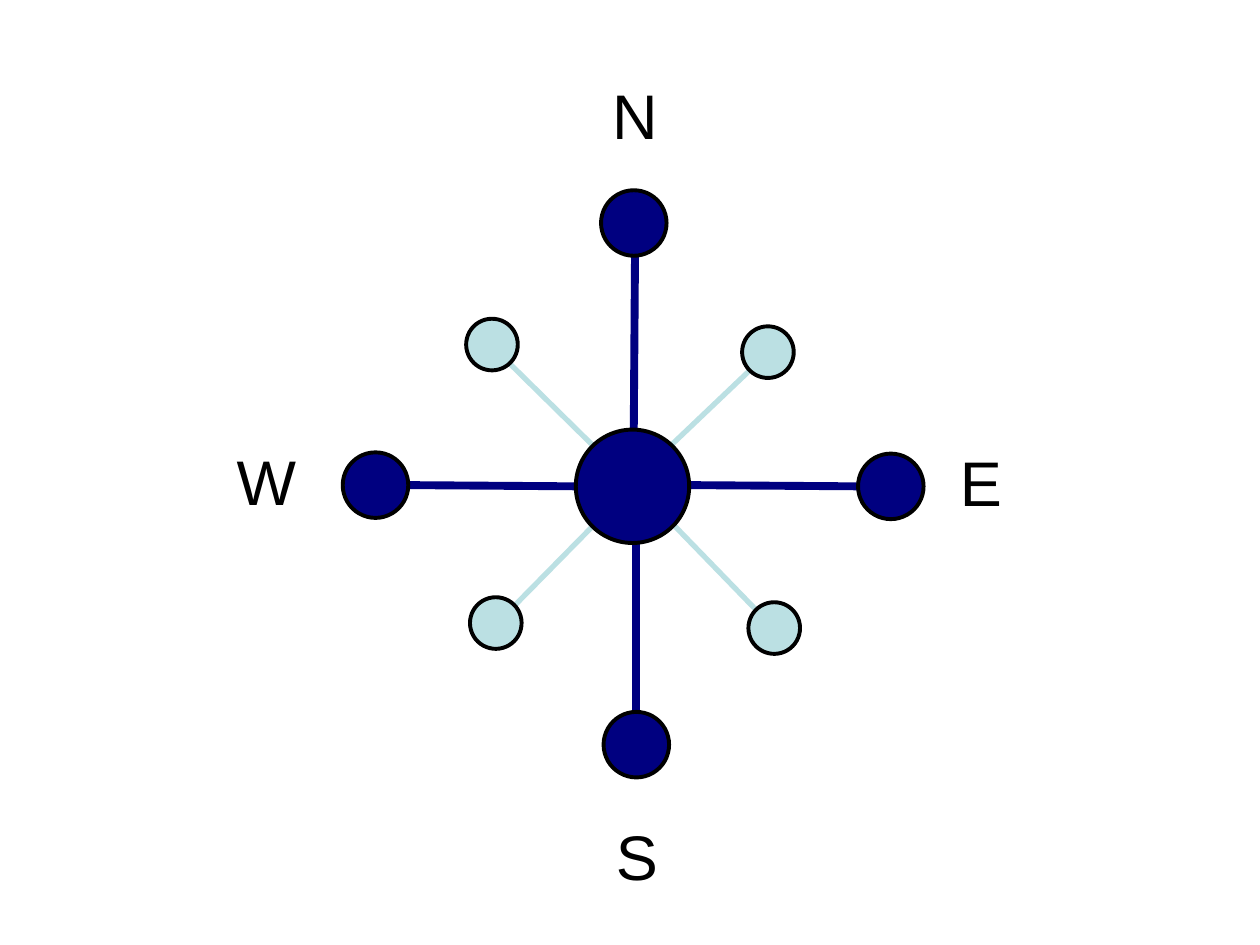
from pptx import Presentation
from pptx import util as u
from pptx.dml.color import RGBColor
from pptx.enum import shapes, text
from pptx.oxml import ns
from lxml import etree

NAVY = RGBColor(0x00, 0x00, 0x80)
PALE = RGBColor(0xBB, 0xE0, 0xE3)
BLACK = RGBColor(0x00, 0x00, 0x00)

HUB = (4.57, 3.41)
MAIN = [
    ("W", (1.78, 3.46), (2.72, 3.59), (3.23, 3.85, 4.58, 3.86)),
    ("N", (4.76, 0.56), (4.77, 1.51), (5.03, 3.41, 5.04, 2.02)),
    ("S", (4.79, 6.44), (4.79, 5.65), (5.05, 4.32, 5.05, 5.64)),
    ("E", (7.52, 3.47), (6.81, 3.6), (5.46, 3.85, 6.81, 3.86)),
]
MINOR = [
    ((3.7, 2.53), (4.71, 3.54, 4.04, 2.88)),
    ((5.89, 2.59), (5.32, 3.54, 5.95, 2.94)),
    ((3.73, 4.74), (4.09, 4.8, 4.7, 4.18)),
    ((5.94, 4.78), (6, 4.84, 5.35, 4.17)),
]


def spoke(slide, ends, color, width):
    line = slide.shapes.add_connector(
        shapes.MSO_CONNECTOR.STRAIGHT, *map(u.Inches, ends))
    line.line.color.rgb = color
    line.line.width = u.Pt(width)
    etree.SubElement(line._element.spPr, ns.qn("a:effectLst"))


def disc(slide, spot, size, color, turn=0):
    dot = slide.shapes.add_shape(
        shapes.MSO_SHAPE.OVAL, *map(u.Inches, (*spot, size, size)))
    dot.rotation = turn
    dot.shadow.inherit = False
    dot.fill.solid()
    dot.fill.fore_color.rgb = color
    dot.line.color.rgb = BLACK
    dot.line.width = u.Pt(2.25)


def label(slide, name, spot):
    box = slide.shapes.add_textbox(*map(u.Inches, (*spot, 0.64, 0.71)))
    frame = box.text_frame
    frame.word_wrap = True
    frame.auto_size = text.MSO_AUTO_SIZE.SHAPE_TO_FIT_TEXT
    run = frame.paragraphs[0].add_run()
    run.text = name
    run.font.name = "Arial"
    run.font.size = u.Pt(36)
    run.font.color.rgb = BLACK


def main():
    deck = Presentation()
    deck.slide_width, deck.slide_height = u.Inches(10), u.Inches(7.5)
    slide = deck.slides.add_slide(deck.slide_layouts[6])
    for name, place, spot, ends in MAIN:
        spoke(slide, ends, NAVY, 4.5)
    for spot, ends in MINOR:
        spoke(slide, ends, PALE, 3)
    disc(slide, HUB, 0.9, NAVY)
    for name, place, spot, ends in MAIN:
        disc(slide, spot, 0.52, NAVY)
        label(slide, name, place)
    for spot, ends in MINOR:
        disc(slide, spot, 0.41, PALE, 314.1)
    deck.save("out.pptx")


if __name__ == "__main__":
    main()
